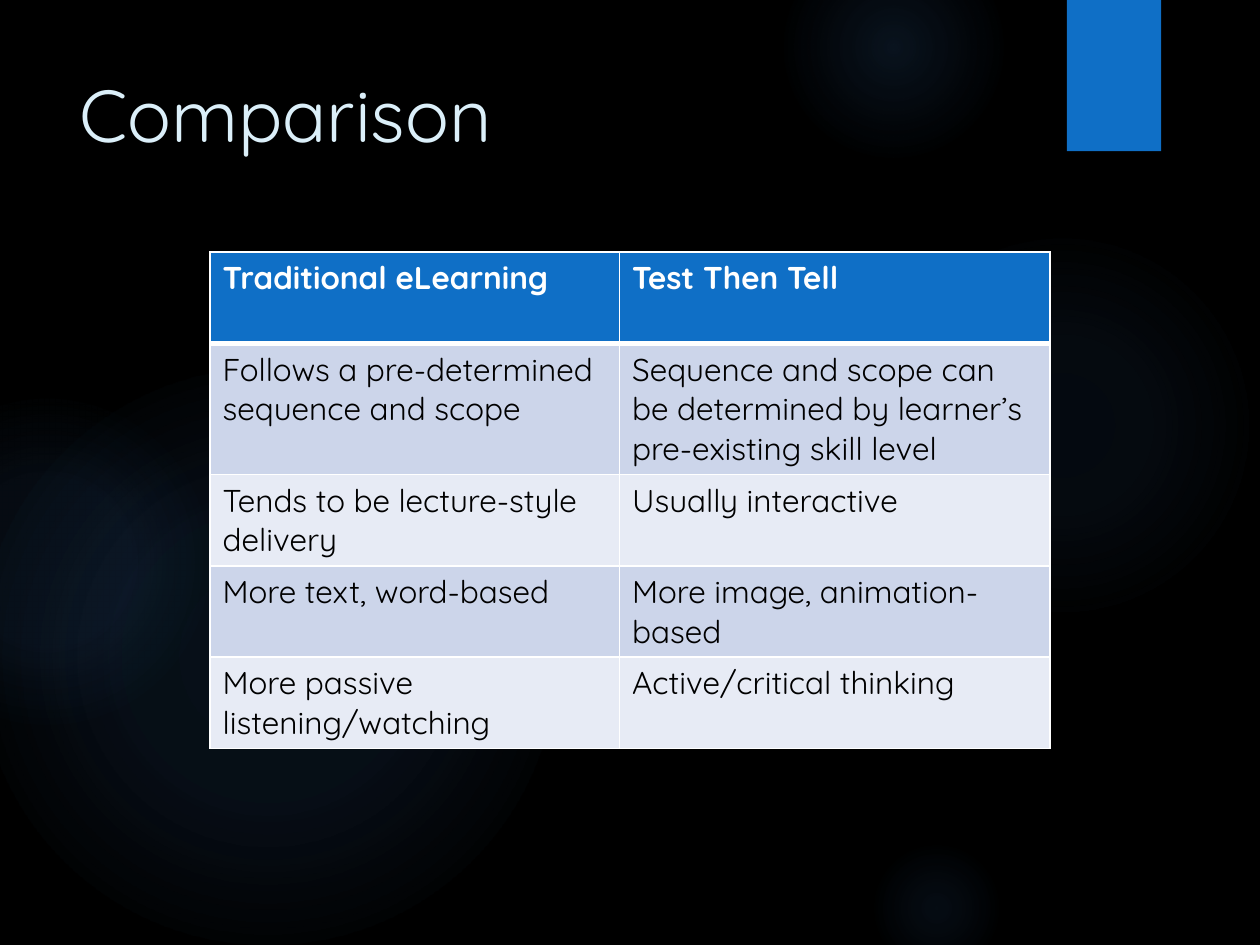
from lxml.etree import SubElement
from pptx import Presentation
from pptx.dml.color import RGBColor
from pptx.enum.shapes import MSO_SHAPE as Shape
from pptx.enum.text import MSO_ANCHOR as Anchor
from pptx.oxml import parse_xml
from pptx.oxml.ns import nsdecls, qn
from pptx.util import Inches, Pt

FONT = "Quicksand"
BLUE, GLOW, BLACK, WHITE = "0F6FC6", "448AD7", "000000", "FFFFFF"
BANDS = ["CCD5EA", "E7EBF5"]


def grid(*units):
    """Turn units of a 120 by 90 grid over the slide into lengths."""
    return [Inches(unit / 12) for unit in units]


def color(text):
    return RGBColor.from_string(text)


presentation = Presentation()
presentation.slide_width, presentation.slide_height = grid(120, 90)
slide = presentation.slides.add_slide(presentation.slide_layouts[6])
slide.background.fill.solid()
slide.background.fill.fore_color.rgb = color(BLACK)

# Soft glows: left, top, diameter, opacity at centre and at 36 %, fade-out stop
glows = [
    (82.7, 22, 37, 7, 6, 69),
    (74.6, -6, 21, 14, 7, 73),
    (82.7, 80, 13, 9, 5, 66),
    (-2, 35, 55, 11, 10, 75),
    (-11, 38, 31, 8, 8, 72),
]
for left, top, diameter, centre, middle, fade in glows:
    glow = slide.shapes.add_shape(Shape.OVAL, *grid(left, top, diameter, diameter))
    glow.shadow.inherit = False
    glow.line.fill.background()
    stops = "".join(
        f'<a:gs pos="{position * 1000}"><a:srgbClr val="{GLOW}">'
        f'<a:alpha val="{opacity * 1000}"/></a:srgbClr></a:gs>'
        for position, opacity in [(0, centre), (36, middle), (fade, 0)]
    )
    gradient = parse_xml(
        f'<a:gradFill {nsdecls("a")} rotWithShape="1"><a:gsLst>{stops}</a:gsLst>'
        '<a:path path="circle"><a:fillToRect l="50000" t="50000" r="50000" b="50000"/>'
        "</a:path></a:gradFill>"
    )
    glow._element.spPr.find(qn("a:prstGeom")).addnext(gradient)

# Corner tab
tab = slide.shapes.add_shape(Shape.RECTANGLE, *grid(101.6, 0, 9, 14.4))
tab.shadow.inherit = False
tab.fill.solid()
tab.fill.fore_color.rgb = color(BLUE)
tab.line.fill.background()

# Title
title = slide.shapes.add_textbox(*grid(6.4, 6, 92.6, 18.4))
title.text_frame.word_wrap = True
title.text_frame.vertical_anchor = Anchor.TOP
paragraph = title.text_frame.paragraphs[0]
paragraph.text = "Comparison"
paragraph.font.name = FONT
paragraph.font.size = Pt(42)
paragraph.font.color.rgb = color("DBEFF9")

# Comparison table
rows = [
    ("Traditional eLearning", "Test Then Tell"),
    ("Follows a pre-determined sequence and scope",
     "Sequence and scope can be determined by learner’s pre-existing skill level"),
    ("Tends to be lecture-style delivery", "Usually interactive"),
    ("More text, word-based", "More image, animation-based"),
    ("More passive listening/watching", "Active/critical thinking"),
]
column_widths = grid(39, 41)
row_heights = grid(8.7, 12.5, 8.7, 8.7, 8.7)
table = slide.shapes.add_table(
    len(rows), 2, *grid(20, 24), sum(column_widths), sum(row_heights)
).table
for column, width in zip(table.columns, column_widths):
    column.width = width
for row, height in zip(table.rows, row_heights):
    row.height = height

for row_index, texts in enumerate(rows):
    header = row_index == 0
    for column_index, text in enumerate(texts):
        cell = table.cell(row_index, column_index)
        cell.fill.solid()
        cell.fill.fore_color.rgb = color(BLUE if header else BANDS[(row_index - 1) % 2])
        paragraph = cell.text_frame.paragraphs[0]
        paragraph.text = text
        paragraph.font.name = FONT
        paragraph.font.size = Pt(18)
        paragraph.font.bold = header
        paragraph.font.color.rgb = color(WHITE if header else BLACK)
        properties = cell._tc.get_or_add_tcPr()
        for order, side in enumerate("LRTB"):
            thick = (header and side == "B") or (row_index == 1 and side == "T")
            border = SubElement(properties, qn(f"a:ln{side}"), w=str(Pt(3 if thick else 1)))
            fill = SubElement(border, qn("a:solidFill"))
            SubElement(fill, qn("a:srgbClr"), val=WHITE)
            properties.insert(order, border)

presentation.save("out.pptx")
